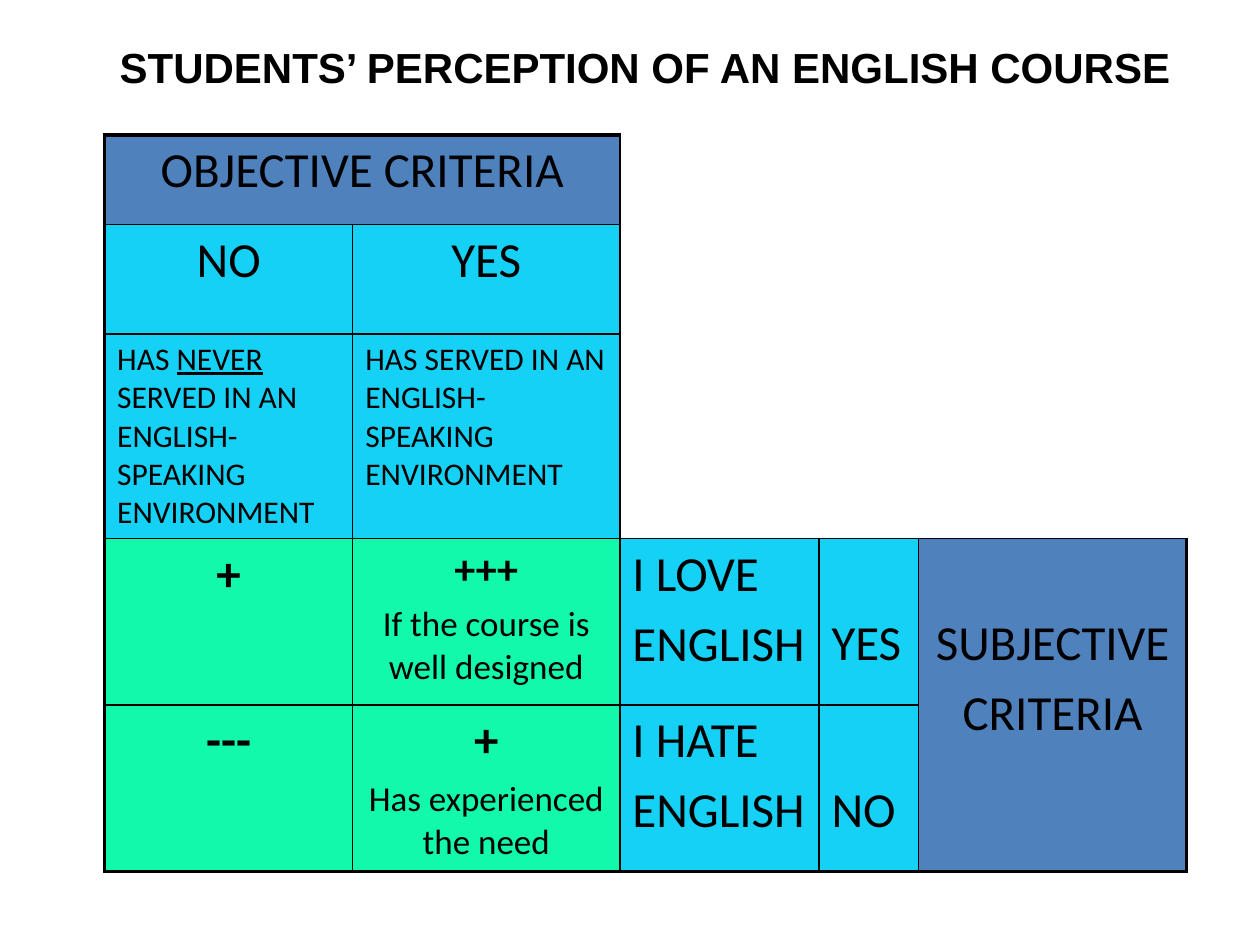
from lxml import etree
from pptx import Presentation
from pptx import util as u
from pptx.dml.color import RGBColor
from pptx.enum import text
from pptx.oxml import ns

Inches, Pt = u.Inches, u.Pt
HUES = {"head": "4F81BD", "label": "16D1F6", "score": "13F9AC", "ink": "000000"}
MID, LEFT = text.PP_ALIGN.CENTER, text.PP_ALIGN.LEFT
DROP = 0.6  # top margin that starts the text on the second line
COLS = [1.97, 2.12, 1.58, 0.79, 2.13]
ROWS = [0.71, 0.87, 1.6, 1.32, 1.32]
SPANS = [(0, 0, 0, 1), (0, 2, 2, 4), (3, 4, 4, 4)]
# (row, column): fill, alignment, top margin, paragraphs of (text, size, bold);
# underscores enclose underlined words
CELLS = {
    (0, 0): ("head", MID, 0.05, [("OBJECTIVE CRITERIA", 28, False)]),
    (1, 0): ("label", MID, 0.05, [("NO", 28, False)]),
    (1, 1): ("label", MID, 0.05, [("YES", 28, False)]),
    (2, 0): ("label", LEFT, 0.05,
             [("HAS _NEVER_ SERVED IN AN ENGLISH-SPEAKING ENVIRONMENT", 18, False)]),
    (2, 1): ("label", LEFT, 0.05,
             [("HAS SERVED IN AN ENGLISH-SPEAKING ENVIRONMENT", 18, False)]),
    (3, 0): ("score", MID, 0.05, [("+", 28, True)]),
    (3, 1): ("score", MID, 0.05,
             [("+++", 24, True), ("If the course is well designed", 20, False)]),
    (3, 2): ("label", LEFT, 0.05, [("I LOVE", 28, False), ("ENGLISH", 28, False)]),
    (3, 3): ("label", LEFT, DROP, [("YES", 28, False)]),
    (3, 4): ("head", MID, DROP, [("SUBJECTIVE", 28, False), ("CRITERIA", 28, False)]),
    (4, 0): ("score", MID, 0.05, [("---", 28, True)]),
    (4, 1): ("score", MID, 0.05,
             [("+", 28, True), ("Has experienced the need", 20, False)]),
    (4, 2): ("label", LEFT, 0.05, [("I HATE", 28, False), ("ENGLISH", 28, False)]),
    (4, 3): ("label", LEFT, DROP, [("NO", 28, False)]),
}


def style(run, **form):
    run.font.color.rgb = RGBColor.from_string(HUES["ink"])
    for name, value in form.items():
        setattr(run.font, name, value)


def border(cell, side, width):
    """Draw one cell edge; a width of 0 hides it."""
    edge = etree.SubElement(cell._tc.get_or_add_tcPr(), ns.qn("a:ln" + side))
    edge.set("w", str(int(Pt(width))))
    if width:
        fill = etree.SubElement(edge, ns.qn("a:solidFill"))
        etree.SubElement(fill, ns.qn("a:srgbClr")).set("val", HUES["ink"])
    else:
        etree.SubElement(edge, ns.qn("a:noFill"))


deck = Presentation()
deck.slide_width, deck.slide_height = Inches(10), Inches(7.5)
slide = deck.slides.add_slide(deck.slide_layouts[5])

title = slide.shapes.title
place = {"left": 0.75, "top": 0.28, "width": 8.74, "height": 0.5}
for name, value in place.items():
    setattr(title, name, Inches(value))
frame = title.text_frame
form = {"word_wrap": True, "auto_size": text.MSO_AUTO_SIZE.NONE,
        "vertical_anchor": text.MSO_ANCHOR.TOP}
for name, value in form.items():
    setattr(frame, name, value)
para = frame.paragraphs[0]
para.alignment = MID
run = para.add_run()
run.text = "STUDENTS’ PERCEPTION OF AN ENGLISH COURSE"
style(run, name="Arial", size=Pt(24), bold=True)

grid = slide.shapes.add_table(len(ROWS), len(COLS), Inches(0.83), Inches(1.07),
                              Inches(sum(COLS)), Inches(sum(ROWS))).table
grid.first_row = grid.horz_banding = False
for col, width in zip(grid.columns, COLS):
    col.width = Inches(width)
for row, height in zip(grid.rows, ROWS):
    row.height = Inches(height)
for top, left, low, right in SPANS:
    grid.cell(top, left).merge(grid.cell(low, right))

# Outer edges are thick; the empty corner keeps only its left and bottom edges.
for r in range(len(ROWS)):
    for c in range(len(COLS)):
        cell = grid.cell(r, c)
        if r < 3 and c > 1:
            first = (r, c) == (0, 2)
            edges = {"L": c == 2, "R": 0, "T": 0, "B": r == 2 or first}
        else:
            thick = {"L": c == 0, "R": c == 4, "T": r == 0, "B": r == 4 or c == 4}
            edges = {side: 2.25 if on else 1 for side, on in thick.items()}
        for side, width in edges.items():
            border(cell, side, width)
        if (r, c) not in CELLS:
            cell.fill.background()
            continue
        hue, align, gap, lines = CELLS[r, c]
        cell.fill.solid()
        cell.fill.fore_color.rgb = RGBColor.from_string(HUES[hue])
        cell.margin_top = Inches(gap)
        for i, (words, size, bold) in enumerate(lines):
            frame = cell.text_frame
            para = frame.add_paragraph() if i else frame.paragraphs[0]
            para.alignment = align
            para.space_before = Pt(size * 0.2)
            for j, part in enumerate(words.split("_")):
                run = para.add_run()
                run.text = part
                style(run, name="Calibri", size=Pt(size), bold=bold,
                      underline=j % 2 == 1)

deck.save("out.pptx")
